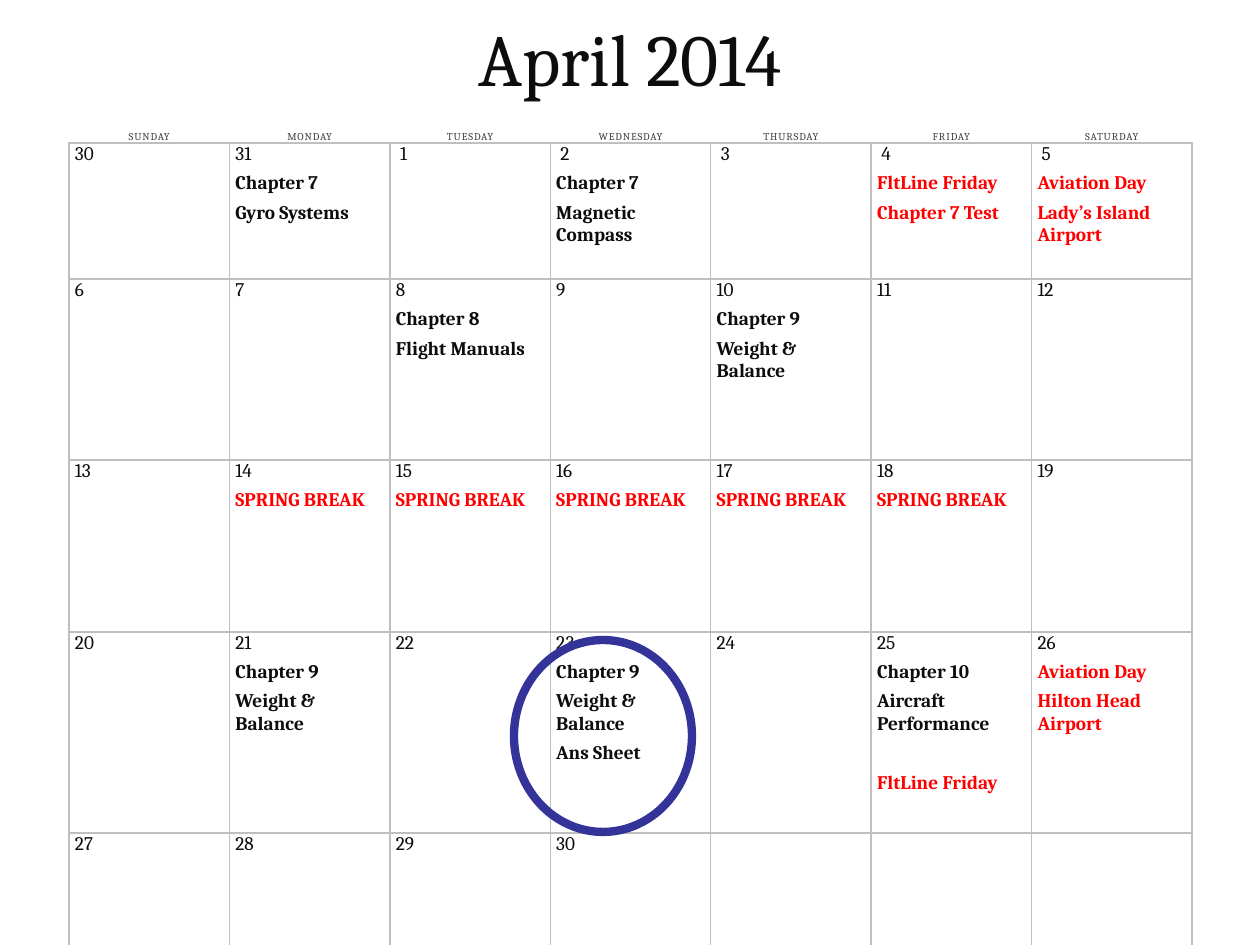
from pptx import Presentation
from pptx.dml.color import RGBColor
from pptx.enum.shapes import MSO_SHAPE
from pptx.enum.text import MSO_ANCHOR, MSO_AUTO_SIZE, PP_ALIGN
from pptx.oxml.ns import qn
from pptx.util import Pt
from lxml import etree

CENTER, LEFT = PP_ALIGN.CENTER, PP_ALIGN.LEFT
TOP, MIDDLE, BOTTOM = MSO_ANCHOR.TOP, MSO_ANCHOR.MIDDLE, MSO_ANCHOR.BOTTOM
SCALE = 914400 / 126  # EMU per px
FONT = "Cambria"
COLORS = {"text": "0D0D0D", "header": "404040", "event": "FF0000",
          "grid": "BFBFBF", "ring": "333399"}

DAYS = ["SUNDAY", "MONDAY", "TUESDAY", "WEDNESDAY", "THURSDAY", "FRIDAY", "SATURDAY"]
WEEKS = [
    ["30", "31", " 1", " 2", " 3", " 4", " 5"],
    ["6", "7", "8", "9", "10", "11", "12"],
    ["13", "14", "15", "16", "17", "18", "19"],
    ["20", "21", "22", "23", "24", "25", "26"],
    ["27", "28", "29", "30", "", "", ""],
]
# (week, weekday) -> entries below the date
ENTRIES = {
    (0, 1): ["Chapter 7", "Gyro Systems"],
    (0, 3): ["Chapter 7", "Magnetic Compass"],
    (0, 5): ["FltLine Friday", "Chapter 7 Test"],
    (0, 6): ["Aviation Day", "Lady’s Island Airport"],
    (1, 2): ["Chapter 8", "Flight Manuals"],
    (1, 4): ["Chapter 9", "Weight & Balance"],
    (3, 1): ["Chapter 9", "Weight & Balance"],
    (3, 3): ["Chapter 9", "Weight & Balance", "Ans Sheet"],
    (3, 5): ["Chapter 10", "Aircraft Performance", "FltLine Friday"],
    (3, 6): ["Aviation Day", "Hilton Head Airport"],
}
ENTRIES.update({(2, day): ["SPRING BREAK"] for day in range(1, 6)})
RED_ENTRIES = {"FltLine Friday", "Chapter 7 Test", "Aviation Day",
               "Lady’s Island Airport", "Hilton Head Airport", "SPRING BREAK"}
ROW_HEIGHTS = [32, 115, 21, 136, 45, 151, 21, 174, 27, 49, 103]


def px(n):
    return round(n * SCALE)


def add_run(p, text, size, color, bold=False):
    r = p.add_run()
    r.text = text
    for name, value in {"size": Pt(size), "name": FONT, "bold": bold}.items():
        setattr(r.font, name, value)
    r.font.color.rgb = RGBColor.from_string(COLORS[color])
    return r


prs = Presentation()
prs.slide_width, prs.slide_height = px(1260), px(945)
s = prs.slides.add_slide(prs.slide_layouts[6])

# Calendar grid: a header row, then a date row and a spacer row per week
frame = s.shapes.add_table(len(ROW_HEIGHTS), len(DAYS), px(69), px(111),
                           px(1123), px(sum(ROW_HEIGHTS)))
table = frame.table
table.first_row = table.horz_banding = False
for row, height in zip(table.rows, ROW_HEIGHTS):
    row.height = px(height)

for i in range(len(ROW_HEIGHTS)):
    is_header, is_date = i == 0, i % 2 == 1
    sides = "B" if is_header else "LRT" if is_date else "LRB"
    week = i // 2
    for j, day in enumerate(DAYS):
        cell = table.cell(i, j)
        cell.margin_left = cell.margin_right = px(6)
        cell.margin_top = cell.margin_bottom = 0
        cell.vertical_anchor = BOTTOM if is_header else TOP

        tcPr = cell._tc.get_or_add_tcPr()
        for side in "LRTB":
            ln = etree.SubElement(tcPr, qn(f"a:ln{side}"), w=str(Pt(1)))
            if side in sides:
                fill = etree.SubElement(ln, qn("a:solidFill"))
                etree.SubElement(fill, qn("a:srgbClr"), val=COLORS["grid"])
            else:
                etree.SubElement(ln, qn("a:noFill"))
        cell.fill.background()

        p = cell.text_frame.paragraphs[0]
        if is_header:
            p.alignment = CENTER
            p.space_after = Pt(2)
            r = add_run(p, day, 6, "header")
            r.font._element.set("spc", "50")
        elif is_date and WEEKS[week][j]:
            p.alignment = LEFT
            p.space_after = Pt(2)
            add_run(p, WEEKS[week][j], 11, "text")
            for k, entry in enumerate(ENTRIES.get((week, j), [])):
                p = cell.text_frame.add_paragraph()
                # A third red entry stands apart from the lesson above it
                p.space_before = Pt(19 if k == 2 and entry in RED_ENTRIES else 2)
                p.space_after = Pt(2)
                add_run(p, entry, 11, "event" if entry in RED_ENTRIES else "text", True)
        else:
            etree.SubElement(p._p, qn("a:endParaRPr"), sz="100")

# Title
title = s.shapes.add_textbox(px(451), px(8), px(358), px(98))
tf = title.text_frame
for name, value in {"margin_left": px(9), "margin_right": px(9), "margin_top": px(5),
                    "margin_bottom": px(5), "word_wrap": False,
                    "vertical_anchor": MIDDLE,
                    "auto_size": MSO_AUTO_SIZE.SHAPE_TO_FIT_TEXT}.items():
    setattr(tf, name, value)
p = tf.paragraphs[0]
p.alignment = CENTER
add_run(p, "April 2014", 42, "text")

# Ring around the 23rd
ring = s.shapes.add_shape(MSO_SHAPE.OVAL, px(514), px(640), px(178), px(192))
ring.shadow.inherit = False
ring.fill.background()
ring.line.color.rgb = RGBColor.from_string(COLORS["ring"])
ring.line.width = Pt(4.75)

prs.save("out.pptx")
